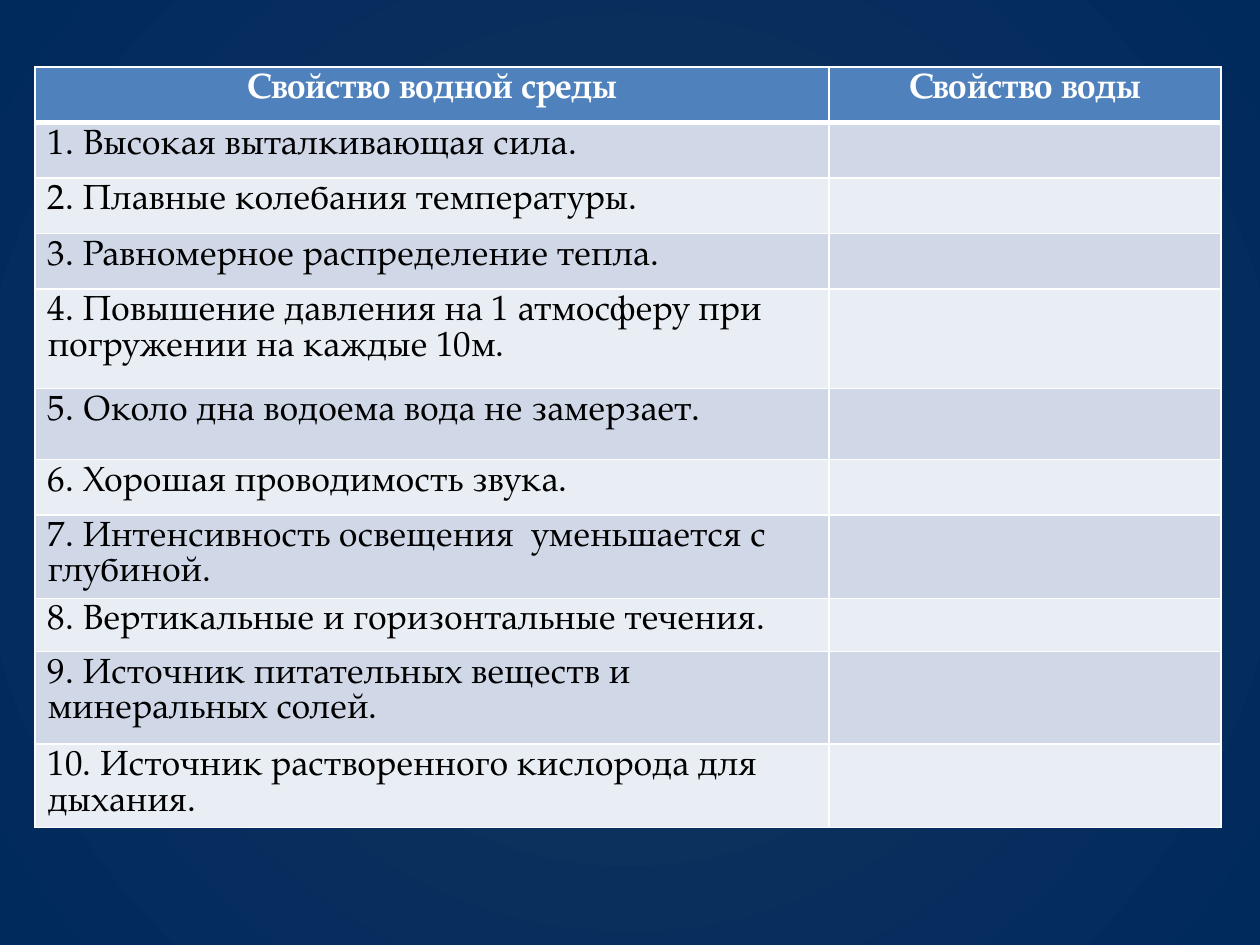
from dataclasses import dataclass

from pptx import Presentation
from pptx.dml.color import RGBColor
from pptx.enum.text import PP_ALIGN as Align
from pptx.oxml import parse_xml
from pptx.oxml.ns import nsdecls
from pptx.slide import Slide
from pptx.table import _Cell as Cell
from pptx.util import Cm, Pt

FONT = "TeX Gyre Pagella"
WHITE, BLACK = "FFFFFF", "000000"
HEADER_FILL = "4F81BD"
BAND_FILLS = ("D0D8E8", "E9EDF4")
BACKGROUND_STOPS = ("17375E", "00295C")
COLUMN_WIDTHS = (16.0, 7.9)
TABLE_LEFT, TABLE_TOP = 0.71, 1.35


@dataclass
class Row:
    texts: tuple[str, str]
    height: float = 1.12
    header: bool = False


ROWS = [
    Row(("Свойство водной среды", "Свойство воды"), header=True),
    Row(("1. Высокая выталкивающая сила.", "")),
    Row(("2. Плавные колебания температуры.", "")),
    Row(("3. Равномерное распределение тепла.", "")),
    Row(("4. Повышение давления на 1 атмосферу при погружении на каждые 10м.", ""), 2.0),
    Row(("5. Около дна водоема вода не замерзает.", ""), 1.43),
    Row(("6. Хорошая проводимость звука.", "")),
    Row(("7. Интенсивность освещения  уменьшается с глубиной.", ""), 1.68),
    Row(("8. Вертикальные и горизонтальные течения.", ""), 1.07),
    Row(("9. Источник питательных веществ и минеральных солей.", ""), 1.87),
    Row(("10. Источник растворенного кислорода для дыхания.", ""), 1.68),
]


def color(value: str) -> RGBColor:
    return RGBColor.from_string(value)


def paint_background(slide: Slide) -> None:
    fill = slide.background.fill
    fill.gradient()
    for position, (stop, value) in enumerate(zip(fill.gradient_stops, BACKGROUND_STOPS)):
        stop.position = position
        stop.color.rgb = color(value)
    # Turn the linear gradient into a circular one
    linear = slide.element.xpath(".//a:gradFill/a:lin")[0]
    linear.getparent().replace(linear, parse_xml(
        f'<a:path {nsdecls("a")} path="circle">'
        '<a:fillToRect l="50000" t="50000" r="50000" b="50000"/></a:path>'))


def add_borders(cell: Cell, top: float, bottom: float) -> None:
    properties = cell._tc.get_or_add_tcPr()
    widths = {"lnL": 1, "lnR": 1, "lnT": top, "lnB": bottom}
    for index, (side, width) in enumerate(widths.items()):
        properties.insert(index, parse_xml(
            f'<a:{side} {nsdecls("a")} w="{Pt(width)}"><a:solidFill>'
            f'<a:srgbClr val="{WHITE}"/></a:solidFill></a:{side}>'))


def fill_cell(cell: Cell, text: str, fill: str, header: bool) -> None:
    cell.fill.solid()
    cell.fill.fore_color.rgb = color(fill)
    cell.text_frame.text = text
    paragraph = cell.text_frame.paragraphs[0]
    paragraph.alignment = Align.CENTER if header else Align.LEFT
    for font in [paragraph.font, *(run.font for run in paragraph.runs)]:
        font.name, font.size, font.bold = FONT, Pt(20), header
        font.color.rgb = color(WHITE if header else BLACK)


def add_property_table(slide: Slide, rows: list[Row]) -> None:
    table = slide.shapes.add_table(
        len(rows), len(COLUMN_WIDTHS), Cm(TABLE_LEFT), Cm(TABLE_TOP),
        Cm(sum(COLUMN_WIDTHS)), Cm(sum(row.height for row in rows))).table
    for column, width in zip(table.columns, COLUMN_WIDTHS):
        column.width = Cm(width)
    for index, row in enumerate(rows):
        table.rows[index].height = Cm(row.height)
        fill = HEADER_FILL if row.header else BAND_FILLS[(index - 1) % 2]
        for column_index, text in enumerate(row.texts):
            cell = table.cell(index, column_index)
            fill_cell(cell, text, fill, row.header)
            # A thick rule parts the header from the body
            add_borders(cell, top=3 if index == 1 else 1, bottom=3 if row.header else 1)


def main() -> None:
    presentation = Presentation()
    presentation.slide_width, presentation.slide_height = Cm(25.4), Cm(19.05)
    slide = presentation.slides.add_slide(presentation.slide_layouts[6])
    paint_background(slide)
    add_property_table(slide, ROWS)
    presentation.save("out.pptx")


if __name__ == "__main__":
    main()
